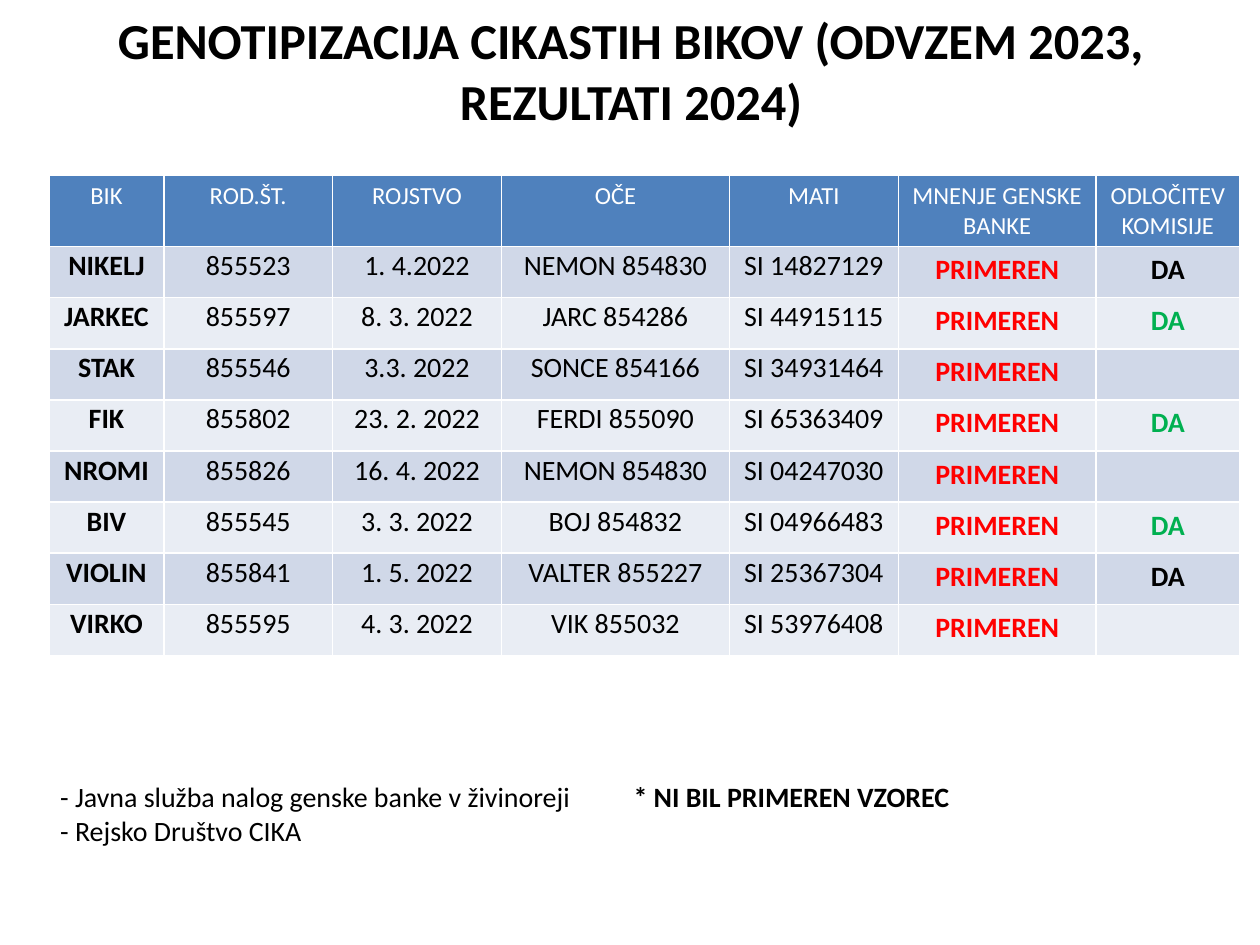
from dataclasses import dataclass

from lxml import etree
from pptx import Presentation
from pptx.dml.color import RGBColor
from pptx.enum.text import MSO_ANCHOR, PP_ALIGN
from pptx.oxml.ns import qn
from pptx.util import Inches, Pt

CENTER = PP_ALIGN.CENTER
MIDDLE = MSO_ANCHOR.MIDDLE


@dataclass(frozen=True)
class Theme:
    font: str = "Calibri"
    black: str = "000000"
    white: str = "FFFFFF"
    red: str = "FF0000"
    green: str = "00B050"
    header_fill: str = "4F81BD"
    band_fills: tuple = ("D0D8E8", "E9EDF4")
    title_size: float = 28.8
    header_size: float = 14
    body_size: float = 16


TITLE = "GENOTIPIZACIJA CIKASTIH BIKOV (ODVZEM 2023, REZULTATI 2024)"
HEADERS = ["BIK", "ROD.ŠT.", "ROJSTVO", "OČE", "MATI",
           "MNENJE GENSKE BANKE", "ODLOČITEV KOMISIJE"]
COLUMN_WIDTHS = [0.91, 1.34, 1.34, 1.81, 1.34, 1.57, 1.14]
OPINION_COLUMN = HEADERS.index("MNENJE GENSKE BANKE")
OPINION = "PRIMEREN"
BULLS = [
    ("NIKELJ", "855523", "1. 4.2022", "NEMON 854830", "SI 14827129", OPINION, "DA"),
    ("JARKEC", "855597", "8. 3. 2022", "JARC 854286", "SI 44915115", OPINION, "DA"),
    ("STAK", "855546", "3.3. 2022", "SONCE 854166", "SI 34931464", OPINION, ""),
    ("FIK", "855802", "23. 2. 2022", "FERDI 855090", "SI 65363409", OPINION, "DA"),
    ("NROMI", "855826", "16. 4. 2022", "NEMON 854830", "SI 04247030", OPINION, ""),
    ("BIV", "855545", "3. 3. 2022", "BOJ 854832", "SI 04966483", OPINION, "DA"),
    ("VIOLIN", "855841", "1. 5. 2022", "VALTER 855227", "SI 25367304", OPINION, "DA"),
    ("VIRKO", "855595", "4. 3. 2022", "VIK 855032", "SI 53976408", OPINION, ""),
]
GREEN_DECISIONS = {"JARKEC", "FIK", "BIV"}


class SlideBuilder:
    def __init__(self, slide, theme):
        self.slide = slide
        self.theme = theme

    def style(self, span, size, color, bold=False):
        span.font.name = self.theme.font
        span.font.size = Pt(size)
        span.font.bold = bold
        span.font.color.rgb = RGBColor.from_string(color)

    def text_box(self, left, top, width, height):
        box = self.slide.shapes.add_textbox(
            Inches(left), Inches(top), Inches(width), Inches(height))
        box.text_frame.word_wrap = True
        return box.text_frame

    def title(self, text):
        frame = self.text_box(0.51, 0.13, 9, 0.85)
        frame.vertical_anchor = MIDDLE
        frame.text = text
        para = frame.paragraphs[0]
        para.alignment = CENTER
        self.style(para.runs[0], self.theme.title_size, self.theme.black, True)

    def cell(self, cell, text, fill, size, color, bold=False):
        cell.fill.solid()
        cell.fill.fore_color.rgb = RGBColor.from_string(fill)
        if text:
            cell.text = text
            para = cell.text_frame.paragraphs[0]
            para.alignment = CENTER
            self.style(para.runs[0], size, color, bold)

    def tighten(self, cell):
        cell.margin_left = cell.margin_right = Inches(0.07)
        cell.margin_top = cell.margin_bottom = 0
        cell.text_frame.paragraphs[0].line_spacing = 1.07

    def bull_table(self, headers, bulls, widths):
        theme = self.theme
        table = self.slide.shapes.add_table(
            len(bulls) + 1, len(headers), Inches(0.39), Inches(1.39),
            Inches(sum(widths)), Inches(3.65)).table
        for column, (text, width) in enumerate(zip(headers, widths)):
            table.columns[column].width = Inches(width)
            self.cell(table.cell(0, column), text, theme.header_fill,
                      theme.header_size, theme.white)
        for row, bull in enumerate(bulls):
            fill = theme.band_fills[row % 2]
            decision = theme.green if bull[0] in GREEN_DECISIONS else theme.black
            colors = [theme.black] * OPINION_COLUMN + [theme.red, decision]
            for column, (text, color) in enumerate(zip(bull, colors)):
                cell = table.cell(row + 1, column)
                bold = column == 0 or column >= OPINION_COLUMN
                self.cell(cell, text, fill, theme.body_size, color, bold)
                if column < OPINION_COLUMN:
                    self.tighten(cell)

    def footnotes(self, lines, tab):
        """Lines of (text, bold) spans; spans after a tab start at the tab stop."""
        frame = self.text_box(0.38, 6.14, 8.83, 0.64)
        for index, line in enumerate(lines):
            para = frame.add_paragraph() if index else frame.paragraphs[0]
            for text, bold in line:
                span = para.add_run()
                span.text = text
                self.style(span, self.theme.body_size, self.theme.black, bold)
        properties = frame.paragraphs[0]._p.get_or_add_pPr()
        stops = etree.SubElement(properties, qn("a:tabLst"))
        etree.SubElement(stops, qn("a:tab"), pos=str(Inches(tab)), algn="l")


def main():
    deck = Presentation()
    deck.slide_width, deck.slide_height = Inches(10), Inches(7.5)
    page = SlideBuilder(deck.slides.add_slide(deck.slide_layouts[6]), Theme())
    page.title(TITLE)
    page.bull_table(HEADERS, BULLS, COLUMN_WIDTHS)
    page.footnotes([
        [("- Javna služba nalog genske banke v živinoreji\t", False),
         ("* NI BIL PRIMEREN VZOREC", True)],
        [("- Rejsko Društvo CIKA", False)],
    ], tab=4.55)
    deck.save("out.pptx")


if __name__ == "__main__":
    main()
